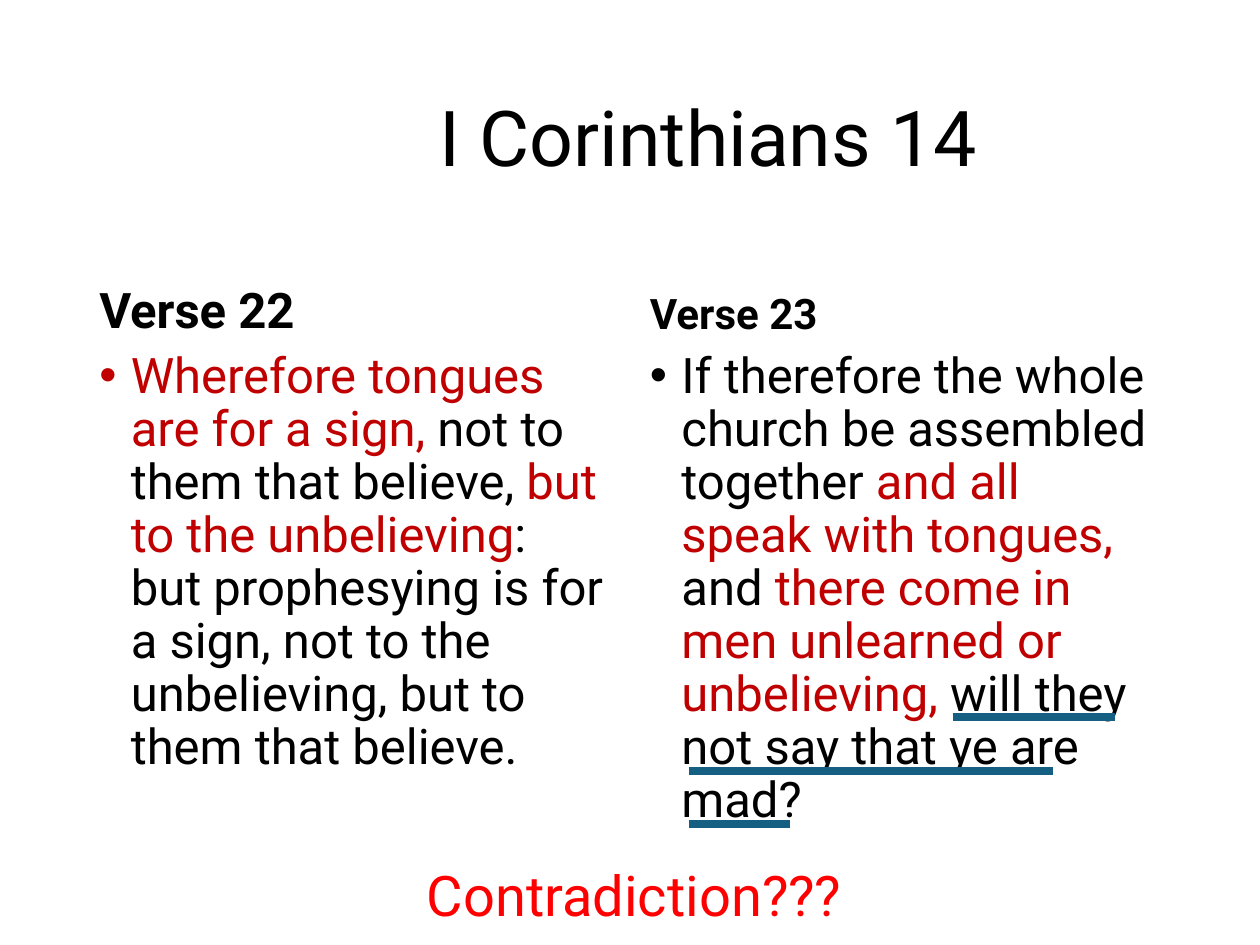
import pptx
import pptx.dml.color
import pptx.enum.shapes
import pptx.enum.text
import pptx.oxml
import pptx.oxml.ns
import pptx.util

Inches = pptx.util.Inches
Pt = pptx.util.Pt
Anchor = pptx.enum.text.MSO_ANCHOR
BLACK, DARK, RED, BLUE = "000000", "C00000", "FF0000", "156082"

# Content: each column has left, width, heading, heading size, verse runs
columns = [
    (0.69, 4.23, "Verse 22", 28, [
        ("Wherefore tongues are for a sign, ", DARK),
        ("not to them that believe, ", BLACK),
        ("but to the unbelieving", DARK),
        (": but prophesying is for a sign, not to the unbelieving, "
         "but to them that believe.", BLACK)]),
    (5.06, 4.25, "Verse 23", 24, [
        ("If therefore the whole church be assembled together ", BLACK),
        ("and all speak with tongues,", DARK),
        (" and ", BLACK),
        ("there come in men unlearned or unbelieving, ", DARK),
        ("will they not say that ye are mad?", BLACK)]),
]
# Underlines: start x, end x, y
marks = [(7.56, 8.85, 5.69), (5.47, 8.36, 6.12), (5.47, 6.27, 6.54)]

deck = pptx.Presentation()
deck.slide_width, deck.slide_height = Inches(10), Inches(7.5)
slide = deck.slides.add_slide(deck.slide_layouts[6])


def paint(hue):
    return pptx.dml.color.RGBColor.from_string(hue)


def add_node(parent, tag, **attrs):
    node = pptx.oxml.parse_xml(f"<a:{tag} {pptx.oxml.ns.nsdecls('a')}/>")
    for name, value in attrs.items():
        node.set(name, str(value))
    parent.append(node)


def write(runs, box, size=28, bold=False, anchor=Anchor.TOP,
          space=0.9, inset=0.1, bullet=False):
    frame = slide.shapes.add_textbox(*map(Inches, box)).text_frame
    frame.word_wrap = True
    frame.vertical_anchor = anchor
    frame.margin_left = Inches(inset)
    para = frame.paragraphs[0]
    para.line_spacing = space
    if bullet:
        props = para._p.get_or_add_pPr()
        props.set("marL", str(Inches(0.25)))
        props.set("indent", str(Inches(-0.25)))
        add_node(props, "buFont", typeface="Arial")
        add_node(props, "buChar", char="•")
    for text, hue in runs:
        run = para.add_run()
        run.text = text
        run.font.name = "Roboto"
        run.font.size = Pt(size)
        run.font.bold = bold
        run.font.color.rgb = paint(hue)


# Title, set right of centre
write([("I Corinthians 14", BLACK)], (0.69, 0.4, 8.62, 1.45), size=44,
      anchor=Anchor.MIDDLE, inset=2.8)

# Two verse columns
for left, width, head, size, verse in columns:
    write([(head, BLACK)], (left, 1.84, width, 0.9), size=size, bold=True,
          anchor=Anchor.BOTTOM)
    write(verse, (left, 2.74, width, 4.03), bullet=True)

# Underlines below the closing words
for start, end, y in marks:
    line = slide.shapes.add_connector(
        pptx.enum.shapes.MSO_CONNECTOR.STRAIGHT,
        Inches(start), Inches(y), Inches(end), Inches(y))
    line.line.color.rgb = paint(BLUE)
    line.line.width = Pt(4.5)
    add_node(line._element.spPr, "effectLst")

# Closing question
write([("Contradiction???", RED)], (3.29, 6.78, 4.37, 0.64), size=32, space=1.0)

deck.save("out.pptx")
